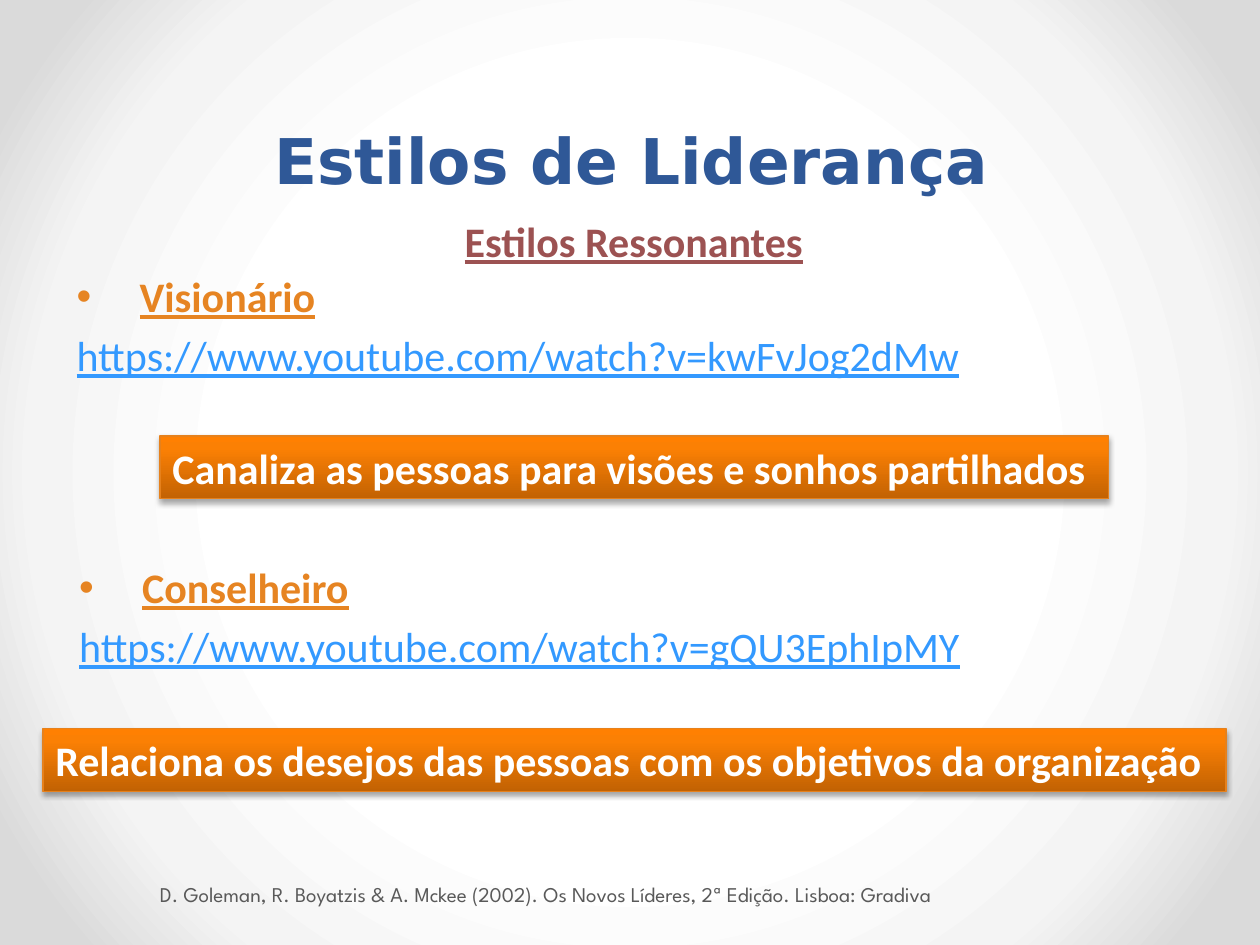
import pptx
import pptx.util
import pptx.oxml
import pptx.oxml.ns
import pptx.dml.color
import pptx.enum.shapes
import pptx.enum.text
from lxml import etree

Inches, Pt, qn = pptx.util.Inches, pptx.util.Pt, pptx.oxml.ns.qn
ALIGN, ANCHOR = pptx.enum.text.PP_ALIGN, pptx.enum.text.MSO_ANCHOR

# Content
COLORS = {"title": "2F5897", "subtitle": "9C5252", "style": "E68422", "link": "3399FF",
          "source": "595959", "banner_text": "FFFFFF", "banner_line": "E6811C",
          "shadow": "000000"}
PAGE_STOPS = [(50, "FFFFFF"), (76, "F4F4F4"), (92, "DADADA")]
BANNER_STOPS = [(0, "C26203"), (80, "FB8004"), (100, "FF8002")]

# text, position and size, font, points, colour, underline
HEADINGS = [
    ("Estilos de Liderança", (0.51, 0.36, 9, 1.25), "DejaVu Sans", 36, "title", False),
    ("Estilos Ressonantes", (0.53, 1.47, 9, 0.69), "Calibri", 24, "subtitle", True),
]
STYLES = [
    ("Visionário", "https://www.youtube.com/watch?v=kwFvJog2dMw", (0.51, 2.1, 9, 1.42)),
    ("Conselheiro", "https://www.youtube.com/watch?v=gQU3EphIpMY", (0.53, 4.41, 9, 1.42)),
]
BANNERS = [
    ("Canaliza as pessoas para visões e sonhos partilhados", (1.27, 3.46, 7.53, 0.5)),
    ("Relaciona os desejos das pessoas com os objetivos da organização",
     (0.34, 5.78, 9.39, 0.5)),
]
SOURCE = "D. Goleman, R. Boyatzis & A. Mckee (2002). Os Novos Líderes, 2ª Edição. Lisboa: Gradiva"


def gradient(stops, direction):
    marks = "".join(f'<a:gs pos="{pos * 1000}"><a:srgbClr val="{color}"/></a:gs>'
                    for pos, color in stops)
    return pptx.oxml.parse_xml(
        f'<a:gradFill {pptx.oxml.ns.nsdecls("a")} rotWithShape="1">'
        f'<a:gsLst>{marks}</a:gsLst>{direction}</a:gradFill>')


def format_para(para, font, size, color, bold=False, underline=False):
    for span in para.runs:
        span.font.name, span.font.size = font, Pt(size)
        span.font.bold, span.font.underline = bold, underline
        span.font.color.rgb = pptx.dml.color.RGBColor.from_string(COLORS[color])


def add_text(page, text, place):
    box = page.shapes.add_textbox(*map(Inches, place))
    box.text_frame.word_wrap = True
    box.text_frame.text = text
    return box.text_frame


def add_bullet(para):
    props = para._p.get_or_add_pPr()
    props.set("marL", str(Inches(0.5)))
    props.set("indent", str(Inches(-0.5)))
    etree.SubElement(props, qn("a:buFont"), typeface="Arial")
    etree.SubElement(props, qn("a:buChar"), char="•")


def add_banner(page, text, place):
    banner = page.shapes.add_shape(pptx.enum.shapes.MSO_SHAPE.RECTANGLE, *map(Inches, place))
    banner.line.color.rgb = pptx.dml.color.RGBColor.from_string(COLORS["banner_line"])
    banner.line.width = Pt(0.75)
    banner.shadow.inherit = False
    props = banner._element.spPr
    props.find(qn("a:prstGeom")).addnext(
        gradient(BANNER_STOPS, '<a:lin ang="16200000" scaled="0"/>'))
    shadow = etree.SubElement(props.find(qn("a:effectLst")), qn("a:outerShdw"),
                              blurRad=str(Pt(3.1)), dist=str(Pt(1.8)), dir="5400000",
                              rotWithShape="0")
    color = etree.SubElement(shadow, qn("a:srgbClr"), val=COLORS["shadow"])
    etree.SubElement(color, qn("a:alpha"), val="35000")
    frame = banner.text_frame
    frame.text = text
    frame.word_wrap = False
    frame.auto_size = pptx.enum.text.MSO_AUTO_SIZE.SHAPE_TO_FIT_TEXT
    frame.vertical_anchor = ANCHOR.TOP
    frame.paragraphs[0].alignment = ALIGN.LEFT
    format_para(frame.paragraphs[0], "Calibri", 24, "banner_text", bold=True)


def main():
    deck = pptx.Presentation()
    deck.slide_width, deck.slide_height = Inches(10), Inches(7.5)
    page = deck.slides.add_slide(deck.slide_layouts[6])

    # Background: circular gradient from the centre
    page.background.fill.solid()
    solid = next(page.element.iter(qn("a:solidFill")))
    center = '<a:fillToRect l="50000" t="50000" r="50000" b="50000"/>'
    solid.getparent().replace(
        solid, gradient(PAGE_STOPS, f'<a:path path="circle">{center}</a:path>'))

    # Title and subtitle
    for text, place, font, size, color, underline in HEADINGS:
        frame = add_text(page, text, place)
        frame.vertical_anchor = ANCHOR.BOTTOM
        para = frame.paragraphs[0]
        para.alignment, para.line_spacing = ALIGN.CENTER, Pt(58)
        format_para(para, font, size, color, bold=True, underline=underline)

    # Leadership styles with their video addresses
    for name, address, place in STYLES:
        heading, link = add_text(page, f"{name}\n{address}", place).paragraphs
        add_bullet(heading)
        link.space_before = Pt(4.8)
        format_para(heading, "Calibri", 24, "style", bold=True, underline=True)
        format_para(link, "Calibri", 24, "link", underline=True)

    # Source line
    frame = add_text(page, SOURCE, (1.22, 6.9, 8.14, 0.4))
    frame.margin_left = Inches(0.05)
    frame.vertical_anchor = ANCHOR.MIDDLE
    format_para(frame.paragraphs[0], "League Spartan", 12, "source")

    # Style descriptions
    for text, place in BANNERS:
        add_banner(page, text, place)

    deck.save("out.pptx")


if __name__ == "__main__":
    main()
